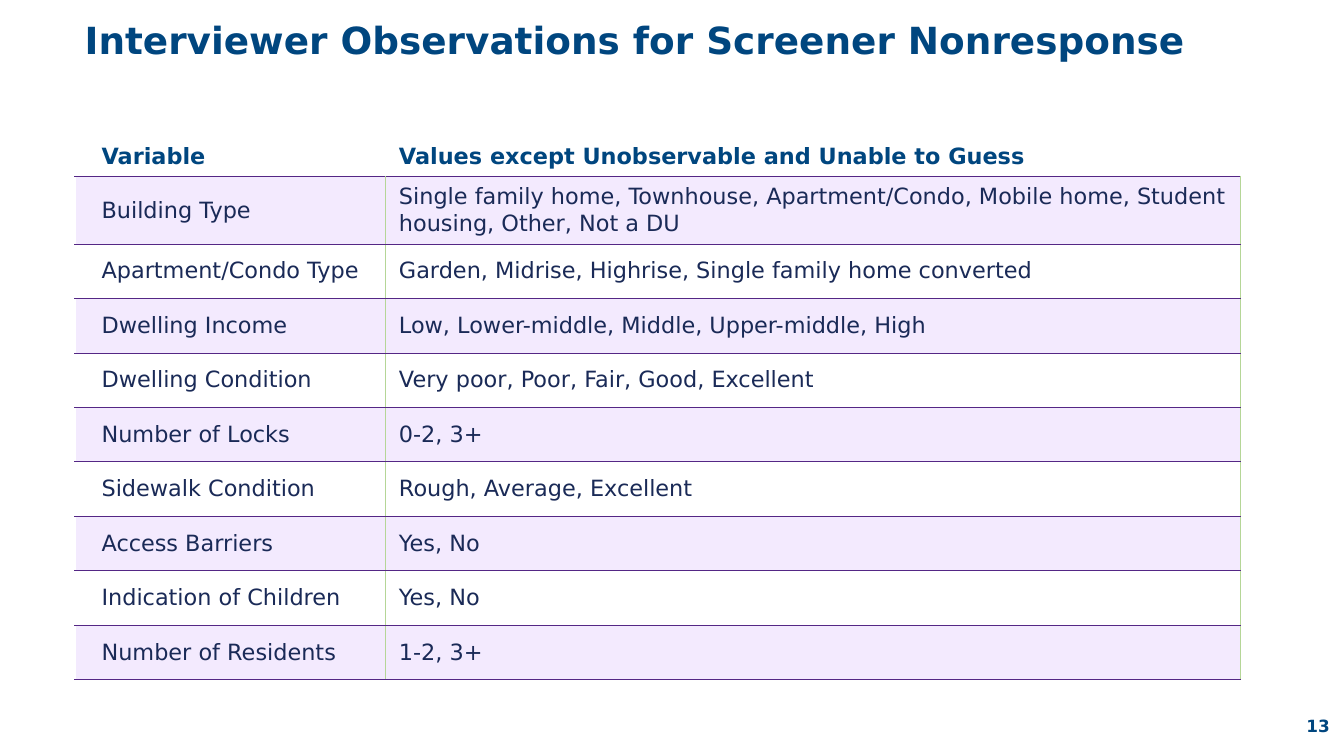
import lxml.etree
import pptx
import pptx.dml.color
import pptx.enum.text
import pptx.oxml.ns
import pptx.util
from pptx.util import Cm

FONT = "DejaVu Sans"
NAVY, INK, PURPLE, GREEN = "00467F", "1A2A57", "542785", "B5D697"
LILAC, WHITE = "F3EAFE", "FFFFFF"
ANCHOR = pptx.enum.text.MSO_ANCHOR

HEADINGS = ("Variable", "Values except Unobservable and Unable to Guess")
OBSERVATIONS = [
    ("Building Type", "Single family home, Townhouse, Apartment/Condo, "
                      "Mobile home, Student housing, Other, Not a DU"),
    ("Apartment/Condo Type", "Garden, Midrise, Highrise, Single family home converted"),
    ("Dwelling Income", "Low, Lower-middle, Middle, Upper-middle, High"),
    ("Dwelling Condition", "Very poor, Poor, Fair, Good, Excellent"),
    ("Number of Locks", "0-2, 3+"),
    ("Sidewalk Condition", "Rough, Average, Excellent"),
    ("Access Barriers", "Yes, No"),
    ("Indication of Children", "Yes, No"),
    ("Number of Residents", "1-2, 3+"),
]


def color(value):
    """Turn a hex string into a colour."""
    return pptx.dml.color.RGBColor.from_string(value)


def style_text(frame, size, ink, bold):
    """Format every run of a text frame."""
    for paragraph in frame.paragraphs:
        for run in paragraph.runs:
            run.font.name = FONT
            run.font.size = pptx.util.Pt(size)
            run.font.bold = bold
            run.font.color.rgb = color(ink)


def add_label(slide, box, text, size, left_inset, line_spacing=1.0):
    """Place a bold, vertically centred line of text in the box."""
    frame = slide.shapes.add_textbox(*map(Cm, box)).text_frame
    frame.word_wrap = True
    frame.vertical_anchor = ANCHOR.MIDDLE
    frame.margin_left = Cm(left_inset)
    frame.text = text
    frame.paragraphs[0].line_spacing = line_spacing
    style_text(frame, size, NAVY, True)


def set_borders(cell, borders):
    """Draw the left, right, top and bottom borders given as (colour, points)."""
    properties = cell._tc.get_or_add_tcPr()
    for side, (ink, points) in zip("LRTB", borders):
        line = lxml.etree.SubElement(properties, pptx.oxml.ns.qn(f"a:ln{side}"),
                                     w=str(pptx.util.Pt(points)))
        fill = lxml.etree.SubElement(line, pptx.oxml.ns.qn("a:solidFill"))
        lxml.etree.SubElement(fill, pptx.oxml.ns.qn("a:srgbClr"), val=ink)


def add_observation_table(slide, box):
    """Fill the box with the table of observed variables and their values."""
    left, top, width, height = box
    entries = [HEADINGS, *OBSERVATIONS]
    table = slide.shapes.add_table(len(entries), 2, *map(Cm, box)).table
    variable_width = 5.87
    table.columns[0].width = Cm(variable_width)
    table.columns[1].width = Cm(width - variable_width)
    blank, rule, divider = (WHITE, 1), (PURPLE, 0.5), (GREEN, 0.5)
    heading_rule = (PURPLE, 1)
    for row, entry in enumerate(entries):
        table.rows[row].height = Cm(height / len(entries))
        heading = row == 0
        for column, text in enumerate(entry):
            cell = table.cell(row, column)
            if heading:
                borders = blank, blank, blank, heading_rule
            else:
                borders = (divider if column else blank, divider,
                           heading_rule if row == 1 else rule, rule)
            set_borders(cell, borders)
            if heading:
                cell.fill.background()
            else:
                cell.fill.solid()
                cell.fill.fore_color.rgb = color(LILAC if row % 2 else WHITE)
            cell.vertical_anchor = ANCHOR.BOTTOM if heading else ANCHOR.MIDDLE
            cell.margin_left = Cm(0.25 if column else 0.5)
            cell.text_frame.text = text
            style_text(cell.text_frame, 12, NAVY if heading else INK, heading)


def main():
    """Build the slide and save it."""
    deck = pptx.Presentation()
    deck.slide_width, deck.slide_height = Cm(25.4), Cm(14.29)
    slide = deck.slides.add_slide(deck.slide_layouts[6])
    add_label(slide, (1.35, 0, 23.29, 1.6),
              "Interviewer Observations for Screener Nonresponse", 20, 0.25, 0.9)
    add_observation_table(slide, (1.42, 2.31, 22.03, 10.3))
    add_label(slide, (24.69, 13.34, 0.89, 0.76), "13", 9, 0)
    deck.save("out.pptx")


if __name__ == "__main__":
    main()
